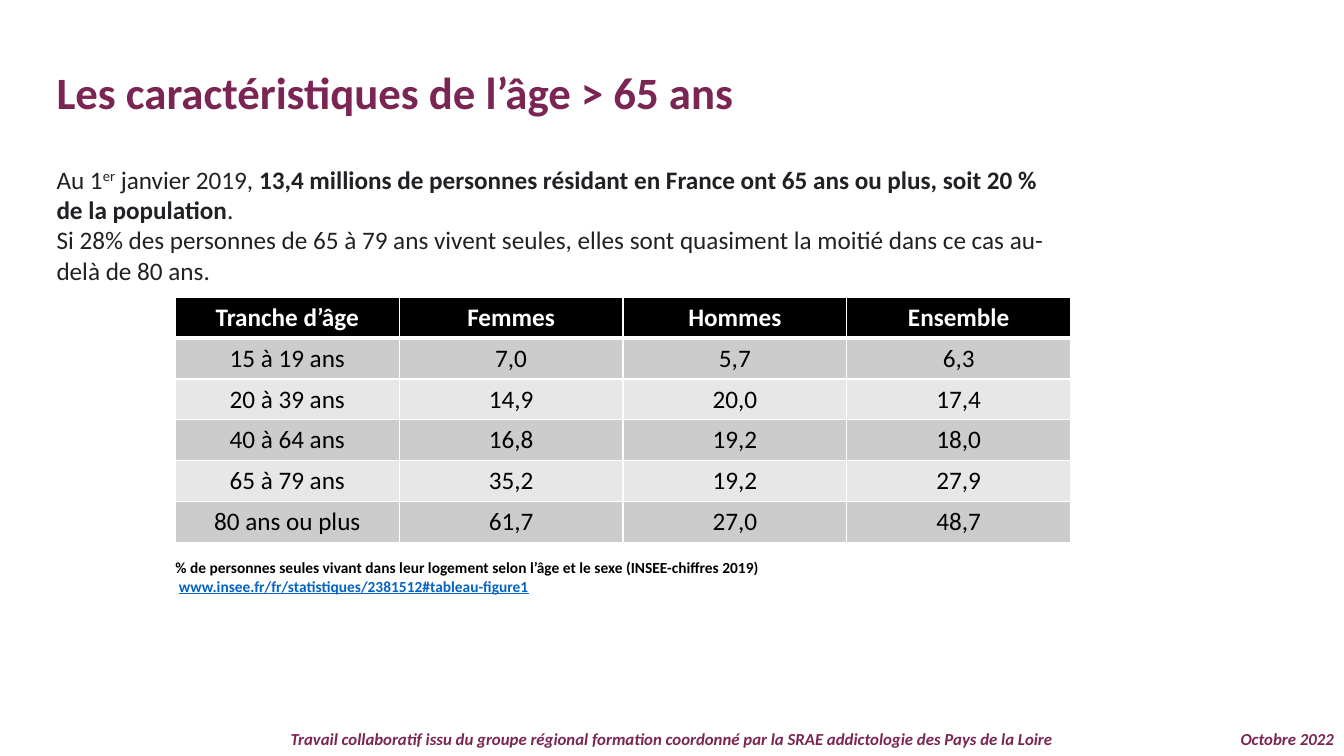
from dataclasses import dataclass
from typing import Optional

from lxml import etree
from pptx import Presentation
from pptx.dml.color import RGBColor
from pptx.enum import text
from pptx.oxml import ns
from pptx.util import Cm, Pt

PLUM = RGBColor(0x7A, 0x25, 0x53)
INK = RGBColor(0x20, 0x21, 0x24)
BLACK = RGBColor(0x00, 0x00, 0x00)
WHITE = RGBColor(0xFF, 0xFF, 0xFF)
LINK_BLUE = RGBColor(0x05, 0x63, 0xC1)
DARK_BAND = RGBColor(0xCC, 0xCC, 0xCC)
LIGHT_BAND = RGBColor(0xE7, 0xE7, 0xE7)
FONT = "Calibri"

ROWS = [
    ["Tranche d’âge", "Femmes", "Hommes", "Ensemble"],
    ["15 à 19 ans", "7,0", "5,7", "6,3"],
    ["20 à 39 ans", "14,9", "20,0", "17,4"],
    ["40 à 64 ans", "16,8", "19,2", "18,0"],
    ["65 à 79 ans", "35,2", "19,2", "27,9"],
    ["80 ans ou plus", "61,7", "27,0", "48,7"],
]
COLUMN_WIDTH, ROW_HEIGHT = 5.64, 1.03


@dataclass
class Area:
    left: float
    top: float
    width: float
    height: float

    def lengths(self) -> tuple:
        return Cm(self.left), Cm(self.top), Cm(self.width), Cm(self.height)


@dataclass
class Span:
    words: str
    size: float
    color: RGBColor
    bold: bool = False
    italic: bool = False
    underline: Optional[bool] = None
    superscript: bool = False


@dataclass
class Footer:
    words: str
    area: Area
    align: text.PP_ALIGN


FOOTERS = [
    Footer("Travail collaboratif issu du groupe régional formation coordonné par la SRAE "
           "addictologie des Pays de la Loire", Area(0, 18.29, 33.87, 0.76), text.PP_ALIGN.CENTER),
    Footer("Octobre 2022", Area(30.2, 18.29, 3.67, 0.76), text.PP_ALIGN.RIGHT),
]
INTRO = [
    [
        Span("Au 1", 18, INK),
        Span("er", 18, INK, superscript=True),
        Span(" janvier 2019, ", 18, INK),
        Span("13,4 millions de personnes résidant en France ont 65 ans ou plus, "
             "soit 20 % de la population", 18, INK, bold=True),
        Span(".", 18, INK),
    ],
    [Span("Si 28% des personnes de 65 à 79 ans vivent seules, elles sont quasiment la moitié "
          "dans ce cas au-delà de 80 ans.", 18, INK)],
]
CAPTION = [
    [Span("% de personnes seules vivant dans leur logement selon l’âge et le sexe "
          "(INSEE-chiffres 2019)", 11, BLACK, bold=True)],
    [
        Span(" ", 11, BLACK, bold=True),
        Span("www.insee.fr/fr/statistiques/2381512#tableau-figure1", 11, LINK_BLUE,
             bold=True, underline=True),
    ],
]


def write_paragraphs(box, lines: list, align=text.PP_ALIGN.LEFT, spacing: float = 1.0) -> None:
    frame = box.text_frame
    frame.word_wrap = True
    frame.auto_size = text.MSO_AUTO_SIZE.NONE
    frame.text = "\n".join([""] * len(lines))
    for para, spans in zip(frame.paragraphs, lines):
        para.alignment = align
        para.line_spacing = spacing
        para.space_before = Pt(0)
        for item in spans:
            span = para.add_run()
            span.text = item.words
            font = span.font
            font.name, font.size = FONT, Pt(item.size)
            font.bold, font.italic, font.underline = item.bold, item.italic, item.underline
            font.color.rgb = item.color
            if item.superscript:
                span._r.get_or_add_rPr().set("baseline", "30000")


def place(box, area: Area) -> None:
    box.left, box.top, box.width, box.height = area.lengths()


def remove_bullets(box) -> None:
    for para in box.text_frame.paragraphs:
        properties = para._p.get_or_add_pPr()
        properties.set("marL", "0")
        properties.set("indent", "0")
        etree.SubElement(properties, ns.qn("a:buNone"))


def add_borders(cell, bottom: float) -> None:
    properties = cell._tc.get_or_add_tcPr()
    for side, width in (("L", 1), ("R", 1), ("T", 1), ("B", bottom)):
        line = etree.SubElement(properties, ns.qn(f"a:ln{side}"), w=str(Pt(width)))
        fill = etree.SubElement(line, ns.qn("a:solidFill"))
        etree.SubElement(fill, ns.qn("a:srgbClr"), val=str(WHITE))


def add_age_table(page) -> None:
    area = Area(4.42, 7.49, COLUMN_WIDTH * len(ROWS[0]), ROW_HEIGHT * len(ROWS))
    table = page.shapes.add_table(len(ROWS), len(ROWS[0]), *area.lengths()).table
    for column in table.columns:
        column.width = Cm(COLUMN_WIDTH)
    for index, values in enumerate(ROWS):
        header = index == 0
        table.rows[index].height = Cm(ROW_HEIGHT)
        for cell, value in zip(table.rows[index].cells, values):
            cell.text = value
            para = cell.text_frame.paragraphs[0]
            para.alignment = text.PP_ALIGN.CENTER
            font = para.runs[0].font
            font.name, font.size, font.bold = FONT, Pt(18), header
            font.color.rgb = WHITE if header else BLACK
            add_borders(cell, bottom=3 if header else 1)
            cell.fill.solid()
            band = DARK_BAND if index % 2 else LIGHT_BAND
            cell.fill.fore_color.rgb = BLACK if header else band


def main() -> None:
    deck = Presentation()
    deck.slide_width, deck.slide_height = Cm(33.87), Cm(19.05)
    page = deck.slides.add_slide(deck.slide_layouts[1])

    for footer in FOOTERS:
        box = page.shapes.add_textbox(*footer.area.lengths())
        span = Span(footer.words, 12, PLUM, bold=True, italic=True)
        write_paragraphs(box, [[span]], footer.align, 0.9)

    title = page.shapes.title
    place(title, Area(1.17, 1.5, 26.44, 1.63))
    write_paragraphs(title, [[Span("Les caractéristiques de l’âge > 65 ans", 32, PLUM, bold=True)]])

    add_age_table(page)

    caption = page.shapes.add_textbox(*Area(4.17, 13.94, 23.9, 1.96).lengths())
    write_paragraphs(caption, CAPTION)

    intro = page.placeholders[1]
    place(intro, Area(1.17, 4.01, 25.83, 3.33))
    write_paragraphs(intro, INTRO)
    remove_bullets(intro)

    deck.save("out.pptx")


if __name__ == "__main__":
    main()
